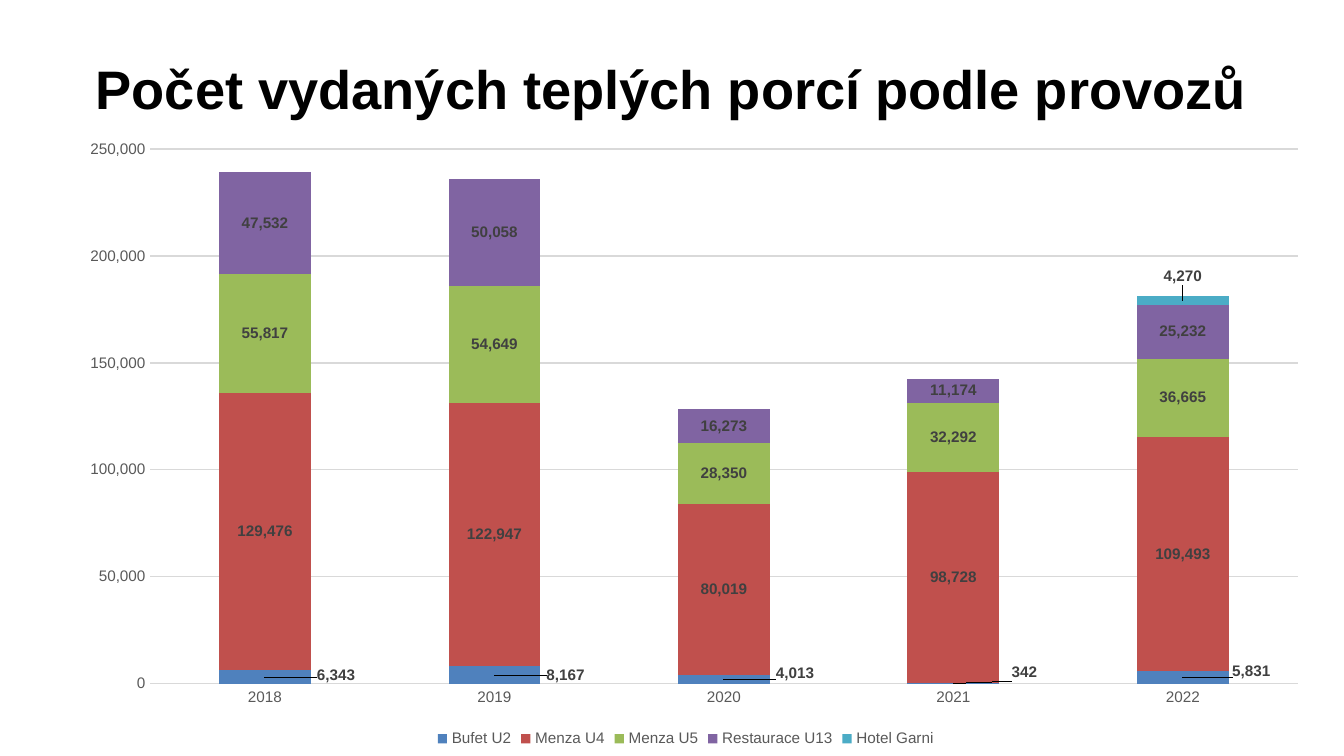
import pptx
import pptx.chart.data
import pptx.dml.color
import pptx.enum.chart
import pptx.enum.text
import pptx.oxml
import pptx.oxml.ns
import pptx.util

PX = 914400 // 122
FONT = "Arial"
BLACK = pptx.dml.color.RGBColor(0x00, 0x00, 0x00)
AXIS_TEXT = pptx.dml.color.RGBColor(0x59, 0x59, 0x59)
LABEL_TEXT = pptx.dml.color.RGBColor(0x40, 0x40, 0x40)
GRID = pptx.dml.color.RGBColor(0xD9, 0xD9, 0xD9)
BLUE = pptx.dml.color.RGBColor(0x4F, 0x81, 0xBD)
RED = pptx.dml.color.RGBColor(0xC0, 0x50, 0x4D)
GREEN = pptx.dml.color.RGBColor(0x9B, 0xBB, 0x59)
PURPLE = pptx.dml.color.RGBColor(0x80, 0x64, 0xA2)
TEAL = pptx.dml.color.RGBColor(0x4B, 0xAC, 0xC6)

CHART_BOX = (39, 93, 1294, 660)
PLOT_BOX = (111, 56, 1148, 535)
YEARS = ["2018", "2019", "2020", "2021", "2022"]
PORTIONS = [
    ("Bufet U2", BLUE, [6343, 8167, 4013, 342, 5831]),
    ("Menza U4", RED, [129476, 122947, 80019, 98728, 109493]),
    ("Menza U5", GREEN, [55817, 54649, 28350, 32292, 36665]),
    ("Restaurace U13", PURPLE, [47532, 50058, 16273, 11174, 25232]),
    ("Hotel Garni", TEAL, [0, 0, 0, 0, 4270]),
]
LABEL_SHIFTS = {
    "Bufet U2": {0: (71, -2), 1: (71, 0), 2: (71, -6), 3: (71, -11), 4: (68, -6)},
    "Hotel Garni": {4: (0, -24)},
}


def emu(*lengths):
    return [length * PX for length in lengths]


def set_font(font, size, color, bold=False):
    font.name = FONT
    font.size = pptx.util.Pt(size)
    font.bold = bold
    font.color.rgb = color


def set_line(line):
    line.color.rgb = GRID
    line.width = pptx.util.Pt(0.75)


def make_layout(settings):
    items = "".join(f'<c:{tag} val="{val}"/>' for tag, val in settings)
    return pptx.oxml.parse_xml(
        f'<c:layout {pptx.oxml.ns.nsdecls("c")}>'
        f"<c:manualLayout>{items}</c:manualLayout></c:layout>"
    )


def add_title(slide, text):
    sp = slide.shapes.add_textbox(*emu(67, 63, 1210, 59))
    tf = sp.text_frame
    tf.word_wrap = True
    tf.vertical_anchor = pptx.enum.text.MSO_ANCHOR.MIDDLE
    tf.margin_left = tf.margin_right = tf.margin_top = tf.margin_bottom = 0
    tf.text = text
    p = tf.paragraphs[0]
    p.alignment = pptx.enum.text.PP_ALIGN.CENTER
    p.line_spacing = 0.9
    set_font(p.runs[0].font, 32, BLACK, True)


def place_plot(chart):
    area = chart._chartSpace.chart.plotArea
    for old in area.xpath("./c:layout"):
        area.remove(old)
    x, y, w, h = PLOT_BOX
    width, height = CHART_BOX[2:]
    area.insert(0, make_layout([
        ("layoutTarget", "inner"), ("xMode", "edge"), ("yMode", "edge"),
        ("x", round(x / width, 3)), ("y", round(y / height, 3)),
        ("w", round(w / width, 3)), ("h", round(h / height, 3)),
    ]))


def format_axes(chart):
    for axis in (chart.category_axis, chart.value_axis):
        axis.major_tick_mark = pptx.enum.chart.XL_TICK_MARK.NONE
        axis.minor_tick_mark = pptx.enum.chart.XL_TICK_MARK.NONE
        set_font(axis.tick_labels.font, 9, AXIS_TEXT)
    set_line(chart.category_axis.format.line)
    values = chart.value_axis
    values.minimum_scale = 0
    values.maximum_scale = 250000
    values.major_unit = 50000
    values.tick_labels.number_format = "#,##0"
    values.tick_labels.number_format_is_linked = False
    values.format.line.fill.background()
    set_line(values.major_gridlines.format.line)


def format_series(series, color):
    series.format.fill.solid()
    series.format.fill.fore_color.rgb = color
    labels = series.data_labels
    labels.show_value = series.name != "Hotel Garni"
    set_font(labels.font, 9, LABEL_TEXT, True)
    for idx, (dx, dy) in LABEL_SHIFTS.get(series.name, {}).items():
        set_font(series.points[idx].data_label.font, 9, LABEL_TEXT, True)
        label = series._element.xpath(f"./c:dLbls/c:dLbl[c:idx/@val='{idx}']")[0]
        label.insert(1, make_layout([
            ("x", round(dx / CHART_BOX[2], 3)), ("y", round(dy / CHART_BOX[3], 3)),
        ]))


def add_portions_chart(slide):
    data = pptx.chart.data.CategoryChartData(number_format="#,##0")
    data.categories = YEARS
    for name, _, values in PORTIONS:
        data.add_series(name, values)
    chart = slide.shapes.add_chart(
        pptx.enum.chart.XL_CHART_TYPE.COLUMN_STACKED, *emu(*CHART_BOX), data
    ).chart
    set_font(chart.font, 10, BLACK)
    chart.has_title = False
    chart.has_legend = True
    chart.legend.position = pptx.enum.chart.XL_LEGEND_POSITION.BOTTOM
    chart.legend.include_in_layout = False
    set_font(chart.legend.font, 9, AXIS_TEXT)
    plot = chart.plots[0]
    plot.gap_width = 150
    plot.overlap = 100
    plot.vary_by_categories = False
    format_axes(chart)
    place_plot(chart)
    for series, (_, color, _) in zip(plot.series, PORTIONS):
        format_series(series, color)


def main():
    prs = pptx.Presentation()
    prs.slide_width = pptx.util.Inches(11.02)
    prs.slide_height = pptx.util.Inches(6.2)
    slide = prs.slides.add_slide(prs.slide_layouts[6])
    add_title(slide, "Počet vydaných teplých porcí podle provozů")
    add_portions_chart(slide)
    prs.save("out.pptx")


if __name__ == "__main__":
    main()
